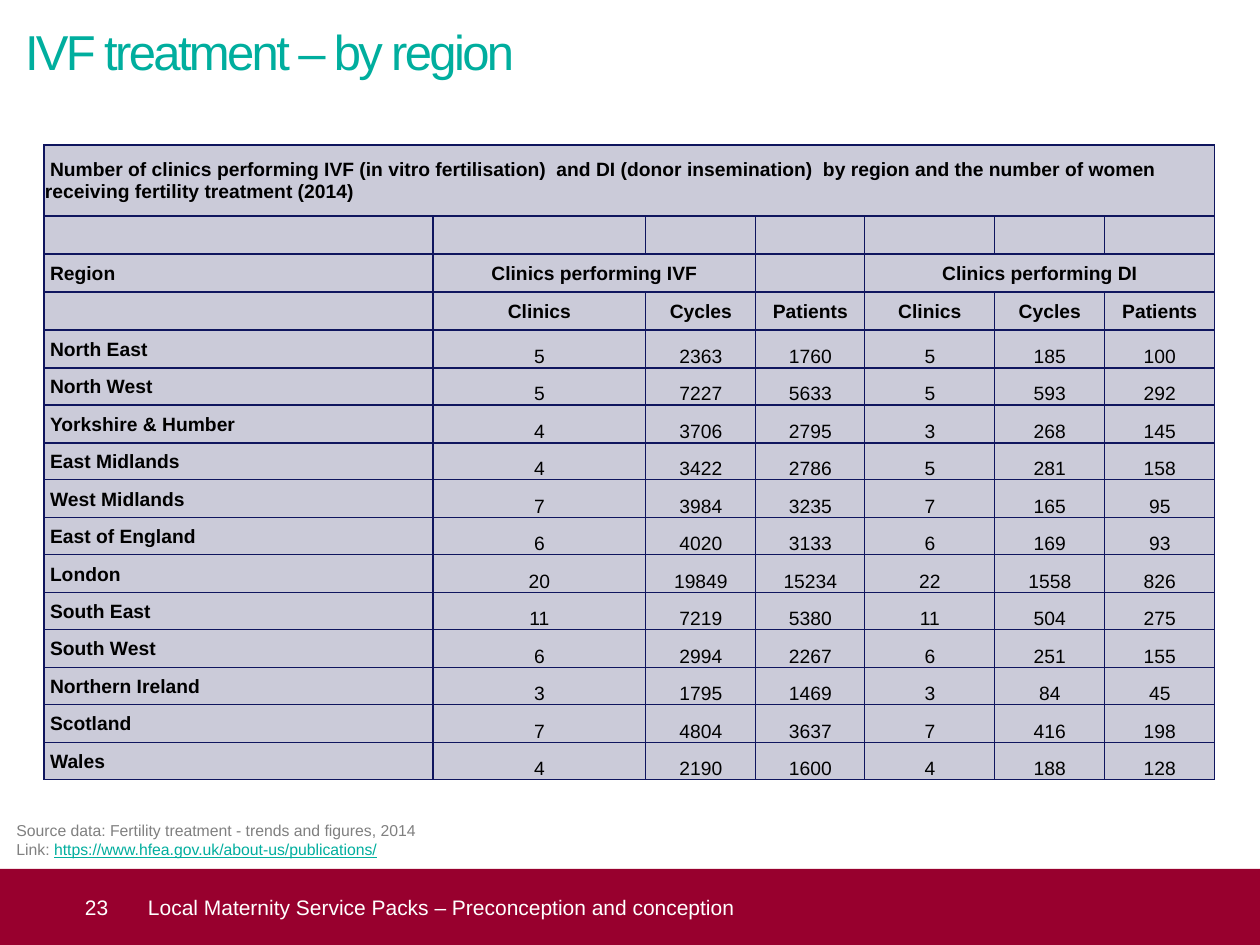
from dataclasses import dataclass

from lxml.etree import SubElement
from pptx import Presentation
from pptx.dml.color import RGBColor
from pptx.enum.shapes import MSO_SHAPE
from pptx.enum.text import MSO_ANCHOR, PP_ALIGN
from pptx.oxml.ns import qn
from pptx.util import Emu, Pt

PX_PER_INCH = 126


@dataclass(frozen=True)
class Theme:
    font: str = "Arial"
    teal: str = "00AE9E"
    crimson: str = "98002E"
    grid: str = "0F155E"
    cell: str = "CBCBD9"
    black: str = "000000"
    white: str = "FFFFFF"
    grey: str = "808080"
    title_size: int = 28
    table_size: int = 11
    footer_size: int = 12
    source_size: int = 9
    grid_width: float = 0.75


THEME = Theme()

TITLE = "IVF treatment – by region"
FOOTER = "Local Maternity Service Packs – Preconception and conception"
CAPTION = (
    "Number of clinics performing IVF (in vitro fertilisation)  and DI (donor "
    "insemination)  by region and the number of women receiving fertility treatment (2014)"
)
MEASURES = ["Clinics", "Cycles", "Patients"]
HEADER_ROWS = [
    [CAPTION] + [""] * 6,
    [""] * 7,
    ["Region", "Clinics performing IVF", "", "", "Clinics performing DI", "", ""],
    ["", *MEASURES, *MEASURES],
]
REGION_ROWS = [
    ["North East", 5, 2363, 1760, 5, 185, 100],
    ["North West", 5, 7227, 5633, 5, 593, 292],
    ["Yorkshire & Humber", 4, 3706, 2795, 3, 268, 145],
    ["East Midlands", 4, 3422, 2786, 5, 281, 158],
    ["West Midlands", 7, 3984, 3235, 7, 165, 95],
    ["East of England", 6, 4020, 3133, 6, 169, 93],
    ["London", 20, 19849, 15234, 22, 1558, 826],
    ["South East", 11, 7219, 5380, 11, 504, 275],
    ["South West", 6, 2994, 2267, 6, 251, 155],
    ["Northern Ireland", 3, 1795, 1469, 3, 84, 45],
    ["Scotland", 7, 4804, 3637, 7, 416, 198],
    ["Wales", 4, 2190, 1600, 4, 188, 128],
]
COLUMN_WIDTHS = [389, 213, 110, 109, 130, 110, 110]
ROW_HEIGHTS = [71, 38, 38, 38] + [38 - i % 2 for i in range(len(REGION_ROWS))]
MERGES = [((0, 0), (0, 6)), ((2, 1), (2, 2)), ((2, 4), (2, 6))]


def px(length):
    return Emu(round(length * 914400 / PX_PER_INCH))


def set_all(target, values):
    for name, value in values.items():
        setattr(target, name, value)


def set_frame(frame, margins, anchor):
    """Margins run left, top, right, bottom."""
    sides = ("margin_left", "margin_top", "margin_right", "margin_bottom")
    set_all(frame, dict(zip(sides, map(px, margins))))
    set_all(frame, {"word_wrap": True, "vertical_anchor": anchor})


def add_span(para, text, size, color, **extra):
    span = para.add_run()
    span.text = text
    set_all(span.font, {"name": THEME.font, "size": Pt(size), **extra})
    span.font.color.rgb = RGBColor.from_string(color)
    return span


def set_indent(para, left=0, first=0):
    properties = para._p.get_or_add_pPr()
    properties.set("marL", str(px(left)))
    properties.set("indent", str(px(first)))


def add_title(page):
    title = page.shapes.title
    set_all(title, {"left": px(25), "top": px(16), "width": px(1208), "height": px(69)})
    set_frame(title.text_frame, (0, 0, 0, 0), MSO_ANCHOR.MIDDLE)
    para = title.text_frame.paragraphs[0]
    para.alignment = PP_ALIGN.LEFT
    span = add_span(para, TITLE, THEME.title_size, THEME.teal)
    span.font._element.set("spc", "-150")


def add_borders(cell):
    properties = cell._tc.get_or_add_tcPr()
    for side in ("lnL", "lnR", "lnT", "lnB"):
        line = SubElement(properties, qn(f"a:{side}"), w=str(Pt(THEME.grid_width)))
        fill = SubElement(line, qn("a:solidFill"))
        SubElement(fill, qn("a:srgbClr"), val=THEME.grid)


def fill_cell(cell, value, is_label, is_header):
    add_borders(cell)
    cell.fill.solid()
    cell.fill.fore_color.rgb = RGBColor.from_string(THEME.cell)
    bold = is_label or is_header
    set_all(cell, {
        "margin_left": px(1), "margin_top": px(1), "margin_right": px(1), "margin_bottom": 0,
        "vertical_anchor": MSO_ANCHOR.MIDDLE if bold else MSO_ANCHOR.BOTTOM,
    })
    para = cell.text_frame.paragraphs[0]
    para.alignment = PP_ALIGN.LEFT if is_label else PP_ALIGN.CENTER
    if is_label:
        set_indent(para, first=5)
    if value == "":
        SubElement(para._p, qn("a:endParaRPr"), sz=str(THEME.table_size * 100))
    else:
        add_span(para, str(value), THEME.table_size, THEME.black, bold=bold)


def add_clinic_table(page):
    rows = HEADER_ROWS + REGION_ROWS
    table = page.shapes.add_table(
        len(rows), len(COLUMN_WIDTHS), px(44), px(145),
        px(sum(COLUMN_WIDTHS)), px(sum(ROW_HEIGHTS)),
    ).table
    set_all(table, {"first_row": False, "horz_banding": False})
    for column, width in zip(table.columns, COLUMN_WIDTHS):
        column.width = px(width)
    for row, height in zip(table.rows, ROW_HEIGHTS):
        row.height = px(height)
    for r, values in enumerate(rows):
        for c, value in enumerate(values):
            fill_cell(table.cell(r, c), value, c == 0, r < len(HEADER_ROWS))
    for first, last in MERGES:
        table.cell(*first).merge(table.cell(*last))


def add_footer_text(box, text, indent):
    set_frame(box.text_frame, (0, 0, 0, 0), MSO_ANCHOR.MIDDLE)
    para = box.text_frame.paragraphs[0]
    para.alignment = PP_ALIGN.LEFT
    set_indent(para, left=indent)
    add_span(para, text, THEME.footer_size, THEME.white)


def add_footer(page):
    top, height = px(869), px(76)
    band = page.shapes.add_shape(MSO_SHAPE.RECTANGLE, 0, top, px(1260), height)
    band.shadow.inherit = False
    band.fill.solid()
    band.fill.fore_color.rgb = RGBColor.from_string(THEME.crimson)
    band.line.fill.background()
    add_footer_text(band, "23", 85)
    box = page.shapes.add_textbox(px(124), top, px(1111), height)
    add_footer_text(box, FOOTER, 24)


def add_source(page):
    box = page.shapes.add_textbox(px(4), px(815), px(1230), px(50))
    frame = box.text_frame
    frame.word_wrap = True
    size, grey = THEME.source_size, THEME.grey
    add_span(frame.paragraphs[0], "Source data: Fertility treatment - trends and figures, 2014", size, grey)
    link = frame.add_paragraph()
    add_span(link, "Link: ", size, grey)
    add_span(link, "https://www.hfea.gov.uk/about-us/publications/", size, THEME.teal, underline=True)


def main():
    deck = Presentation()
    set_all(deck, {"slide_width": px(1260), "slide_height": px(945)})
    page = deck.slides.add_slide(deck.slide_layouts[5])
    add_title(page)
    add_clinic_table(page)
    add_footer(page)
    add_source(page)
    deck.save("out.pptx")


if __name__ == "__main__":
    main()
